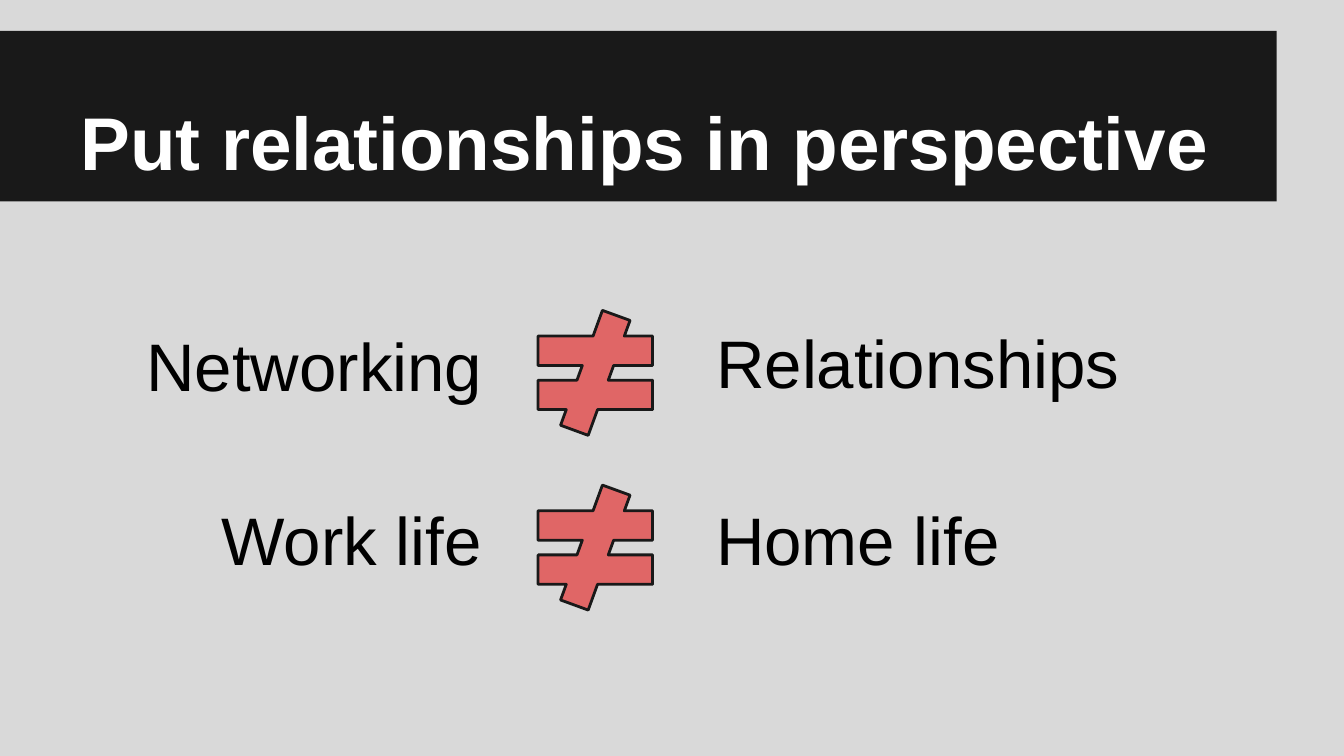
import pptx
import pptx.util
import pptx.dml.color
import pptx.enum.shapes
import pptx.enum.text
from dataclasses import dataclass

Inches = pptx.util.Inches
Shape = pptx.enum.shapes.MSO_SHAPE
Anchor = pptx.enum.text.MSO_ANCHOR


@dataclass(frozen=True)
class Theme:
    back: str = "D9D9D9"
    dark: str = "191919"
    light: str = "FFFFFF"
    ink: str = "000000"
    sign: str = "E06666"
    font: str = "Arial"
    title: int = 40
    body: int = 36


theme = Theme()


def paint(fill, color):
    fill.solid()
    fill.fore_color.rgb = pptx.dml.color.RGBColor.from_string(color)


def write(slide, text, box, size=theme.body, color=theme.ink, bold=False, anchor=Anchor.TOP):
    frame = slide.shapes.add_textbox(*map(Inches, box)).text_frame
    frame.word_wrap = True
    frame.vertical_anchor = anchor
    frame.margin_left = frame.margin_right = Inches(0.1)
    frame.margin_top = frame.margin_bottom = Inches(0.1)
    run = frame.paragraphs[0].add_run()
    run.text = text
    run.font.name = theme.font
    run.font.size = pptx.util.Pt(size)
    run.font.bold = bold
    run.font.color.rgb = pptx.dml.color.RGBColor.from_string(color)


def draw(slide, kind, box, color, line=None):
    shape = slide.shapes.add_shape(kind, *map(Inches, box))
    shape.shadow.inherit = False
    paint(shape.fill, color)
    if line:
        paint(shape.line.fill, line)
        shape.line.width = pptx.util.Pt(1.5)
    else:
        shape.line.fill.background()


def banner(slide, box, text):
    left, top, width, height = box
    draw(slide, Shape.RECTANGLE, box, theme.dark)
    write(slide, text, (left + 0.5, top, width - 0.5, height - 0.02),
          size=theme.title, color=theme.light, bold=True, anchor=Anchor.BOTTOM)


def contrast(slide, box, first, second, indent=0, span=2.87, rise=0, room=3.76, anchor=Anchor.TOP):
    left, top, width, height = box
    write(slide, first, (left + indent, top, span, height))
    draw(slide, Shape.MATH_NOT_EQUAL, (left + 2.86, top, 1.16, 0.93), theme.sign, theme.dark)
    write(slide, second, (left + width - 3.76, top - rise, room, height + rise / 2), anchor=anchor)


def main():
    deck = pptx.Presentation()
    deck.slide_width = Inches(10)
    deck.slide_height = deck.slide_width * 9 // 16
    slide = deck.slides.add_slide(deck.slide_layouts[6])
    paint(slide.background.fill, theme.back)
    banner(slide, (0, 0.23, 9.5, 1.27), "Put relationships in perspective")
    contrast(slide, (0.99, 2.31, 8, 1.02), "Networking", "Relationships",
             rise=0.17, room=3.22, anchor=Anchor.MIDDLE)
    contrast(slide, (0.99, 3.61, 8, 1.02), "Work life", "Home life", indent=0.56, span=2.15)
    deck.save("out.pptx")


if __name__ == "__main__":
    main()
